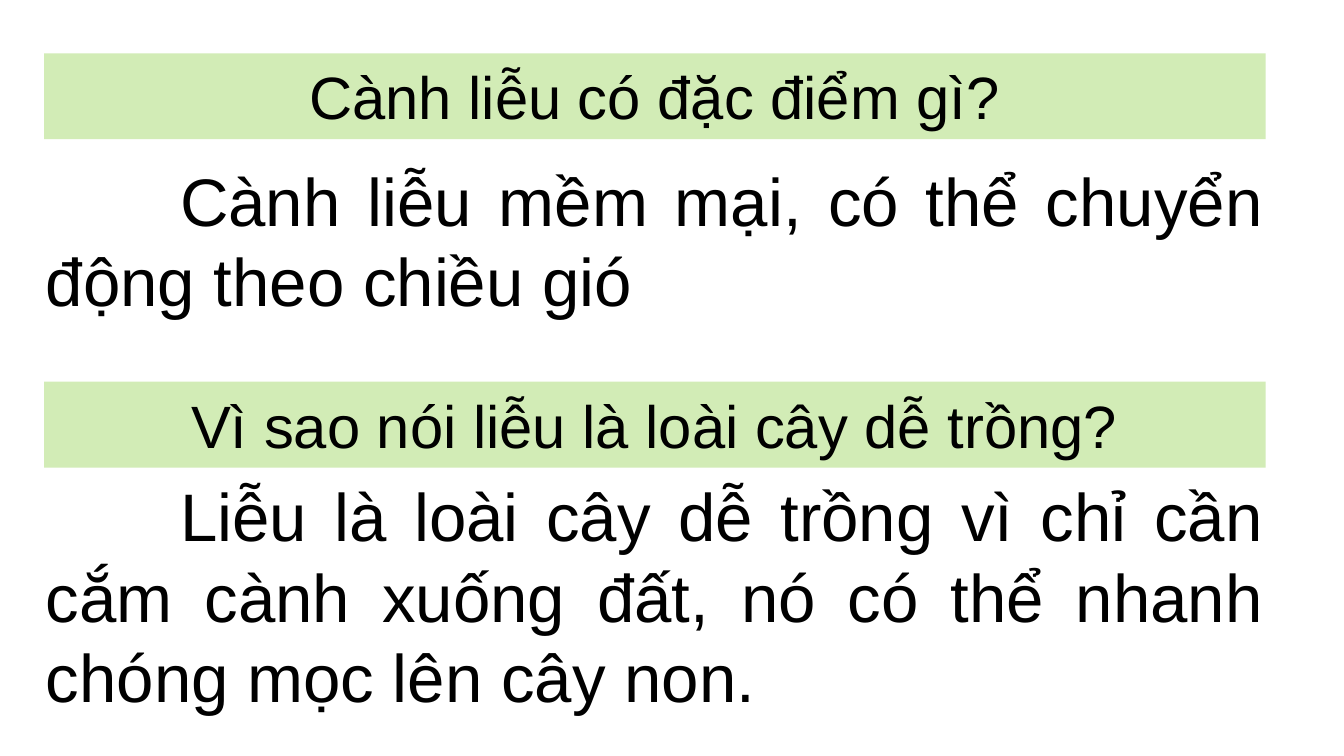
from dataclasses import dataclass

from pptx import Presentation
from pptx.dml.color import RGBColor
from pptx.enum import shapes, text
from pptx.util import Pt


@dataclass(frozen=True)
class Theme:
    font: str = "Arial"
    ink: RGBColor = RGBColor(0x00, 0x00, 0x00)
    band: RGBColor = RGBColor(0xD2, 0xEC, 0xB6)
    question_size: int = 32
    answer_size: int = 36


class SlideBuilder:
    def __init__(self, slide, theme):
        self.slide = slide
        self.theme = theme

    def fill_text(self, shape, content, size, alignment, anchor):
        frame = shape.text_frame
        frame.word_wrap = True
        frame.vertical_anchor = anchor
        paragraph = frame.paragraphs[0]
        paragraph.text = content
        paragraph.alignment = alignment
        font_format = {"name": self.theme.font, "size": Pt(size)}
        for name, value in font_format.items():
            setattr(paragraph.font, name, value)
        paragraph.font.color.rgb = self.theme.ink
        return paragraph

    def question(self, content, left, top, width, height):
        band = self.slide.shapes.add_shape(
            shapes.MSO_SHAPE.RECTANGLE, Pt(left), Pt(top), Pt(width), Pt(height))
        band.shadow.inherit = False
        band.fill.solid()
        band.fill.fore_color.rgb = self.theme.band
        band.line.fill.background()
        self.fill_text(band, content, self.theme.question_size,
                       text.PP_ALIGN.CENTER, text.MSO_ANCHOR.TOP)

    def answer(self, content, left, top, width, height):
        """Add a justified answer whose first line is indented."""
        box = self.slide.shapes.add_textbox(
            Pt(left), Pt(top), Pt(width), Pt(height))
        paragraph = self.fill_text(box, content, self.theme.answer_size,
                                   text.PP_ALIGN.JUSTIFY, text.MSO_ANCHOR.MIDDLE)
        properties = paragraph._p.get_or_add_pPr()
        properties.set("marL", "0")
        properties.set("indent", str(Pt(FIRST_LINE_INDENT)))


FIRST_LINE_INDENT = 72
BAND_LEFT, BAND_WIDTH, BAND_HEIGHT = 23.6, 654.5, 46
ANSWER_LEFT, ANSWER_WIDTH = 17.4, 666.5

# question, band top, answer, answer top, answer height
EXCHANGES = [
    ("Cành liễu có đặc điểm gì?", 28.6,
     "Cành liễu mềm mại, có thể chuyển động theo chiều gió", 100.8, 55.4),
    ("Vì sao nói liễu là loài cây dễ trồng?", 204.5,
     "Liễu là loài cây dễ trồng vì chỉ cần cắm cành xuống đất, "
     "nó có thể nhanh chóng mọc lên cây non.", 285.1, 67.7),
]


def main():
    presentation = Presentation()
    presentation.slide_width = Pt(720)
    presentation.slide_height = Pt(405)
    blank_layout = presentation.slide_layouts[6]
    builder = SlideBuilder(presentation.slides.add_slide(blank_layout), Theme())
    for question, band_top, answer, answer_top, answer_height in EXCHANGES:
        builder.question(question, BAND_LEFT, band_top, BAND_WIDTH, BAND_HEIGHT)
        builder.answer(answer, ANSWER_LEFT, answer_top, ANSWER_WIDTH, answer_height)
    presentation.save("out.pptx")


if __name__ == "__main__":
    main()
